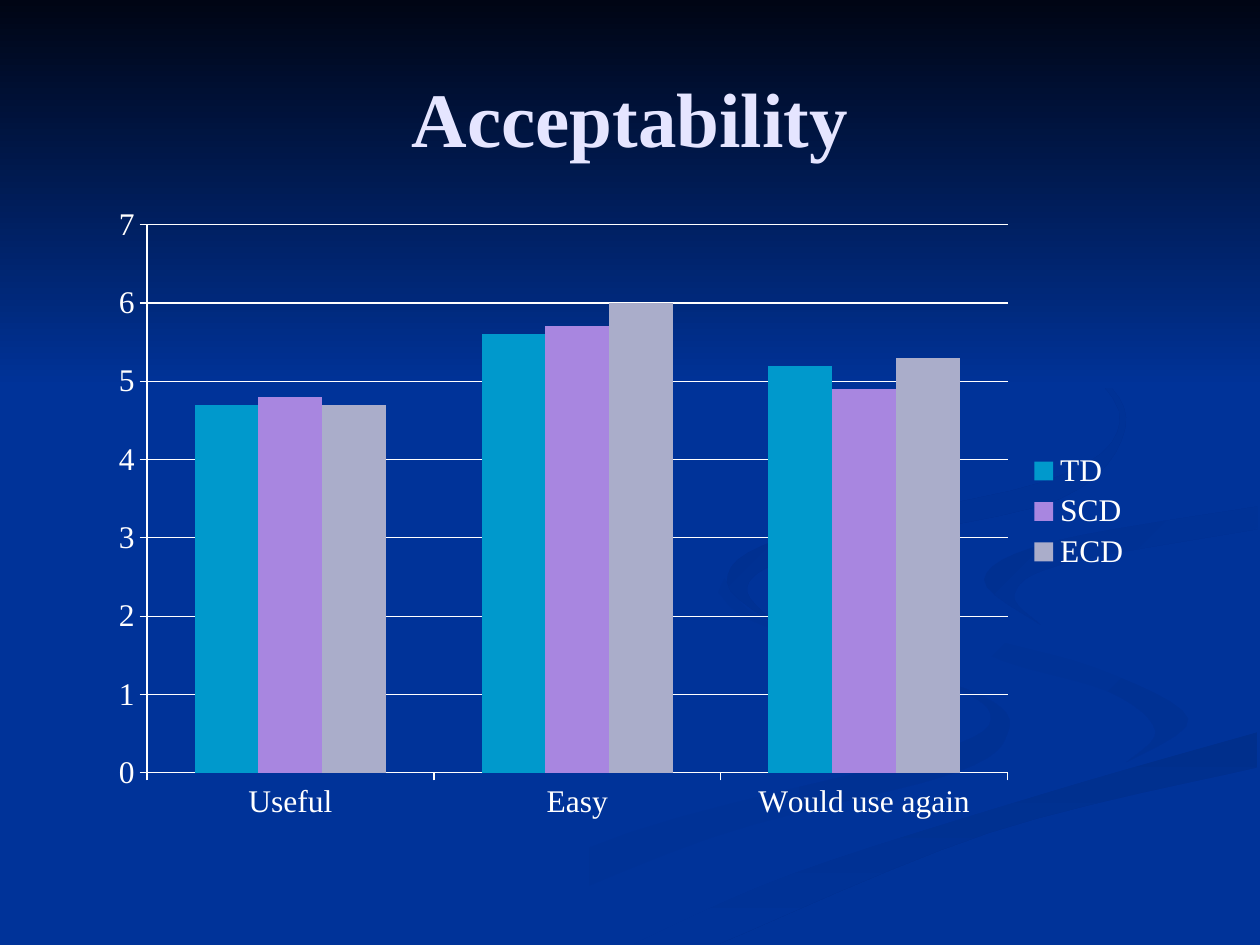
from dataclasses import dataclass

from lxml import etree
from pptx import Presentation
from pptx.chart.data import CategoryChartData
from pptx.dml.color import RGBColor
from pptx.enum.chart import XL_CHART_TYPE as ChartType
from pptx.enum.chart import XL_LEGEND_POSITION as LegendPos
from pptx.enum.chart import XL_TICK_MARK as Tick
from pptx.enum.shapes import MSO_SHAPE as Shape
from pptx.enum.text import MSO_ANCHOR, PP_ALIGN
from pptx.oxml.ns import qn
from pptx.util import Inches, Pt

FONT = "Times New Roman"
COLORS = {
    "background": "003399", "sky": "000514", "title": "E5E5FF", "text": "FFFFFF",
    "TD": "0099CC", "SCD": "A886E0", "ECD": "AAADCA",
    "fade": "003193", "band": "002F8C", "hook": "003091", "curl": "002F8E",
}
Point = tuple[float, float]
Edge = list[Point]


@dataclass
class Ribbon:
    start: str
    end: str
    angle: int
    edges: list[Edge]


@dataclass
class Series:
    name: str
    values: tuple[float, ...]


# Edges shared by neighbouring ribbons
BAND_TOP = [(5.03, 7.49), (6.3, 6.93), (8.31, 6.29), (9.98, 5.81)]
HOOK_TOP = [(7.81, 4.6), (8.35, 4.3), (9.98, 4.02)]
SWIRL_TOP = [(7.24, 4.64), (7.58, 4.98), (8.7, 5.3), (9.43, 5.7), (8.94, 6.05)]

# Background ribbons, from back to front: each is closed by smooth edges
RIBBONS = [
    Ribbon("background", "fade", 0, [
        [(5.75, 4.59), (6.02, 4.9), (6.82, 5.19), (7.81, 5.53), (8, 5.81), (7.56, 6.14),
         (5.64, 6.65), (3.61, 7.49)],
        [(3, 7.49), (4.99, 6.61), (7.39, 5.98), (7.86, 5.66), (7.28, 5.35), (6.02, 4.95),
         (5.7, 4.7)]]),
    Ribbon("background", "fade", 45, [
        SWIRL_TOP,
        [(8.94, 6.05), (9.17, 5.8), (8.8, 5.49), (7.81, 5.18), (7.24, 4.64)]]),
    Ribbon("band", "background", 90, [
        BAND_TOP, [(9.98, 6.09), (7.85, 6.61), (5.71, 7.49)]]),
    Ribbon("background", "background", 0, [
        [(9.98, 3.87), (8.3, 4.15), (7.42, 4.39), *SWIRL_TOP, (6.63, 6.68), (4.77, 7.49)],
        BAND_TOP,
        [(9.98, 5.38), (8.48, 5.03), *HOOK_TOP]]),
    Ribbon("hook", "background", 45, [
        [*reversed(HOOK_TOP), (8.26, 4.96)],
        [(8.26, 4.96), (8.05, 4.72), (8.43, 4.48), (9.98, 4.2)]]),
    Ribbon("curl", "background", 45, [
        [(7.62, 2.33), (8.64, 2.91), (8.93, 3.4), (8.41, 3.96), (6.83, 4.3), (6.14, 4.48),
         (5.93, 4.7), (6.22, 5)],
        [(6.22, 5), (5.77, 4.62), (6.25, 4.26), (8.3, 3.82), (8.89, 3.35), (8.46, 2.79),
         (7.62, 2.33)]]),
]

CATEGORIES = ("Useful", "Easy", "Would use again")
SERIES = [
    Series("TD", (4.7, 5.6, 5.2)),
    Series("SCD", (4.8, 5.7, 4.9)),
    Series("ECD", (4.7, 6.0, 5.3)),
]
# Inner plot area as fractions of the chart frame
PLOT_LAYOUT = {"x": 0.05, "y": 0.05, "w": 0.82, "h": 0.86}


def rgb(name: str) -> RGBColor:
    return RGBColor.from_string(COLORS[name])


def smooth(edge: Edge, steps: int = 6) -> Edge:
    """Catmull-Rom curve through the points of an edge."""
    padded = [edge[0], *edge, edge[-1]]
    curve = [edge[0]]
    for knots in zip(padded, padded[1:], padded[2:], padded[3:]):
        for step in range(1, steps + 1):
            t = step / steps
            x, y = (
                b + t * (c - a + t * (2 * a - 5 * b + 4 * c - d
                                      + t * (3 * (b - c) + d - a))) / 2
                for a, b, c, d in zip(*knots))
            curve.append((x, y))
    return curve


def paint(sp, start: str, end: str, angle: int) -> None:
    sp.shadow.inherit = False
    sp.line.fill.background()
    if start == end:
        sp.fill.solid()
        sp.fill.fore_color.rgb = rgb(start)
        return
    sp.fill.gradient()
    sp.fill.gradient_angle = (360 - angle) % 360
    for stop, name in zip(sp.fill.gradient_stops, (start, end)):
        stop.color.rgb = rgb(name)


def add_ribbon(slide, ribbon: Ribbon) -> None:
    points = [(Inches(x), Inches(y)) for edge in ribbon.edges for x, y in smooth(edge)]
    builder = slide.shapes.build_freeform(*points[0])
    builder.add_line_segments(points[1:], close=True)
    paint(builder.convert_to_shape(), ribbon.start, ribbon.end, ribbon.angle)


def add_title(slide, text: str) -> None:
    tf = slide.shapes.add_textbox(Inches(0.5), Inches(0.3), Inches(9), Inches(1.25)).text_frame
    tf.word_wrap = True
    tf.vertical_anchor = MSO_ANCHOR.MIDDLE
    p = tf.paragraphs[0]
    p.text = text
    p.alignment = PP_ALIGN.CENTER
    p.font.name, p.font.size, p.font.bold = FONT, Pt(44), True
    p.font.color.rgb = rgb("title")


def style_line(line) -> None:
    line.width = Pt(0.75)
    line.color.rgb = rgb("text")


def set_plot_layout(chart) -> None:
    plot_area = chart.plots[0]._element.getparent()
    for old in plot_area.findall(qn("c:layout")):
        plot_area.remove(old)
    layout = etree.Element(qn("c:layout"))
    plot_area.insert(0, layout)
    manual = etree.SubElement(layout, qn("c:manualLayout"))
    settings = {"layoutTarget": "inner", "xMode": "edge", "yMode": "edge", **PLOT_LAYOUT}
    for tag, value in settings.items():
        etree.SubElement(manual, qn(f"c:{tag}")).set("val", str(value))


def add_column_chart(slide, series: list[Series]) -> None:
    data = CategoryChartData()
    data.categories = CATEGORIES
    for item in series:
        data.add_series(item.name, item.values)
    chart = slide.shapes.add_chart(ChartType.COLUMN_CLUSTERED, Inches(0.75), Inches(1.53),
                                   Inches(8.33), Inches(5.06), data).chart
    chart.has_title = False
    chart.font.name, chart.font.size = FONT, Pt(18)
    chart.font.color.rgb = rgb("text")

    # Columns
    plot = chart.plots[0]
    plot.vary_by_categories = False
    plot.gap_width, plot.overlap = 150, 0
    for column in plot.series:
        column.format.fill.solid()
        column.format.fill.fore_color.rgb = rgb(column.name)

    # Axes and legend
    for axis in (chart.category_axis, chart.value_axis):
        axis.major_tick_mark, axis.minor_tick_mark = Tick.OUTSIDE, Tick.NONE
        style_line(axis.format.line)
    values = chart.value_axis
    values.minimum_scale, values.maximum_scale, values.major_unit = 0, 7, 1
    values.tick_labels.number_format = "0"
    values.tick_labels.number_format_is_linked = False
    values.has_major_gridlines = True
    style_line(values.major_gridlines.format.line)
    chart.has_legend = True
    chart.legend.position = LegendPos.RIGHT
    chart.legend.include_in_layout = False
    set_plot_layout(chart)


def main() -> None:
    prs = Presentation()
    prs.slide_width, prs.slide_height = Inches(10), Inches(7.5)
    s = prs.slides.add_slide(prs.slide_layouts[6])
    s.background.fill.solid()
    s.background.fill.fore_color.rgb = rgb("background")
    for ribbon in RIBBONS:
        add_ribbon(s, ribbon)
    # Dark sky across the top
    sky = s.shapes.add_shape(Shape.RECTANGLE, 0, 0, prs.slide_width, Inches(3.08))
    paint(sky, "sky", "background", 90)
    add_title(s, "Acceptability")
    add_column_chart(s, SERIES)
    prs.save("out.pptx")


if __name__ == "__main__":
    main()
